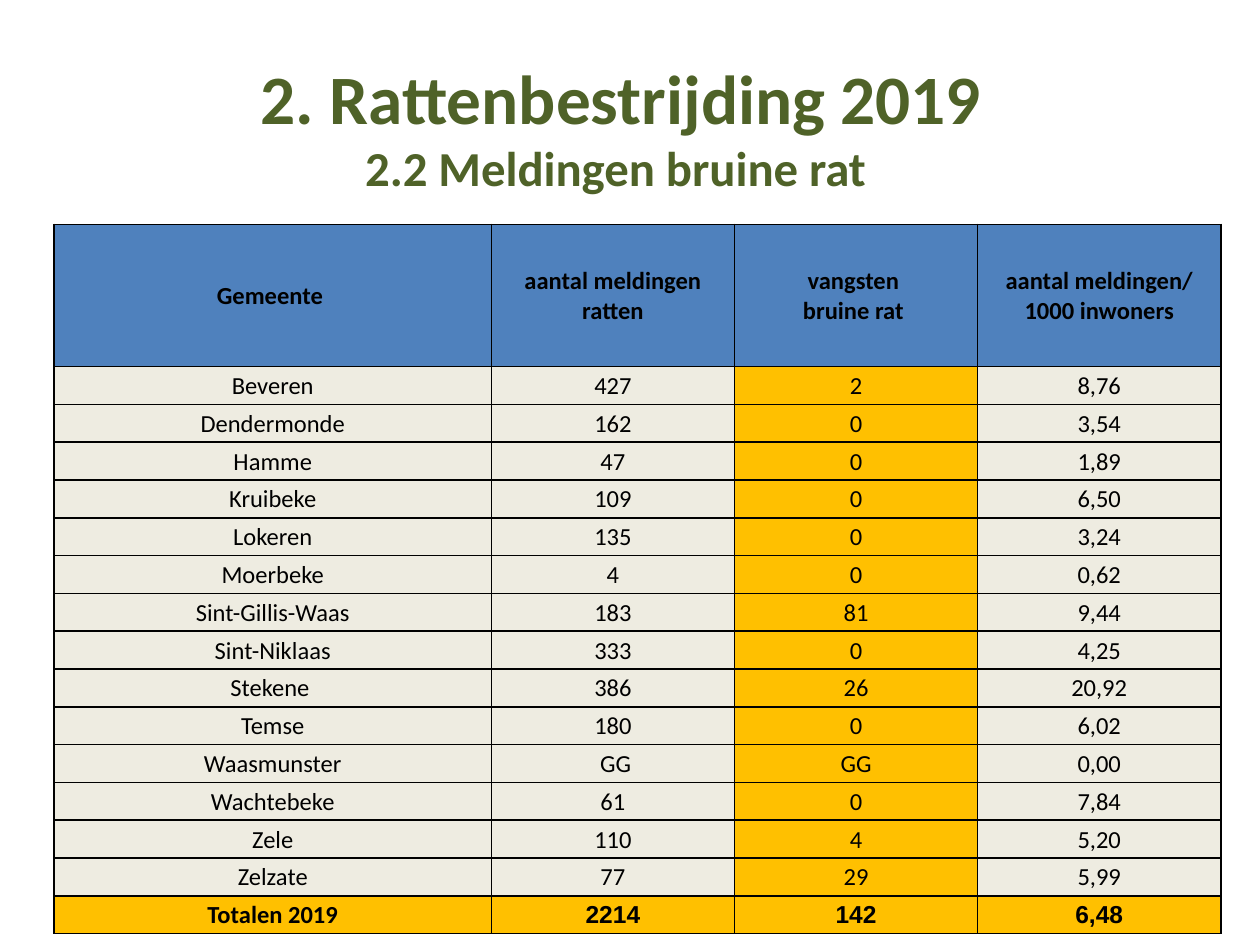
from lxml import etree
from pptx import Presentation, util as u
from pptx.dml.color import RGBColor
from pptx.enum import text
from pptx.oxml.ns import qn

TITLE_LINES = [("2. Rattenbestrijding 2019", 39.6), ("2.2 Meldingen bruine rat ", 27.9)]
HEADER = ("Gemeente ", "aantal meldingen ratten", "vangsten \nbruine rat ",
          "aantal meldingen/ 1000 inwoners")
MUNICIPALITIES = [
    ("Beveren", "427", "2", "8,76"),
    ("Dendermonde", "162", "0", "3,54"),
    ("Hamme", "47", "0", "1,89"),
    ("Kruibeke", "109", "0", "6,50"),
    ("Lokeren", "135", "0", "3,24"),
    ("Moerbeke", "4", "0", "0,62"),
    ("Sint-Gillis-Waas", "183", "81", "9,44"),
    ("Sint-Niklaas", "333", "0", "4,25"),
    ("Stekene ", "386", "26", "20,92"),
    ("Temse", "180", "0", "6,02"),
    ("Waasmunster", " GG", "GG", "0,00"),
    ("Wachtebeke", "61", "0", "7,84"),
    ("Zele", "110", "4", "5,20"),
    ("Zelzate", "77", "29", "5,99"),
]
TOTALS = ("Totalen 2019", "2214", "142", "6,48")
ROWS = [HEADER, *MUNICIPALITIES, TOTALS]

GREEN, BLUE, CREAM, AMBER, BLACK = "4F6228", "4F81BD", "EEECE1", "FFC000", "000000"
LEFT, TABLE_TOP = 0.43, 1.78
COLUMN_WIDTHS = [3.47] + [1.93] * 3
ROW_HEIGHTS = [1.13] + [0.3] * (len(ROWS) - 1)
CATCH_COLUMN = 2
CELL_FORMAT = {"margin_left": u.Inches(0.01), "margin_right": u.Inches(0.01),
               "margin_top": u.Inches(0.01), "margin_bottom": 0,
               "vertical_anchor": text.MSO_ANCHOR.MIDDLE}
TITLE_FORMAT = {"margin_left": 0, "margin_right": 0, "margin_top": 0, "margin_bottom": 0,
                "word_wrap": True, "vertical_anchor": text.MSO_ANCHOR.BOTTOM}


def color(value):
    return RGBColor.from_string(value)


def apply(target, values):
    for name, value in values.items():
        setattr(target, name, value)


def format_paragraph(paragraph, size, ink, bold, font="Calibri"):
    paragraph.alignment = text.PP_ALIGN.CENTER
    apply(paragraph.font, {"size": u.Pt(size), "bold": bold, "name": font})
    paragraph.font.color.rgb = color(ink)


def add_borders(cell):
    properties = cell._tc.get_or_add_tcPr()
    for index, side in enumerate(("lnL", "lnR", "lnT", "lnB")):
        line = etree.Element(qn(f"a:{side}"), w=str(u.Pt(1)))
        fill = etree.SubElement(line, qn("a:solidFill"))
        etree.SubElement(fill, qn("a:srgbClr"), val=BLACK)
        properties.insert(index, line)


def add_title(slide):
    box = slide.shapes.add_textbox(u.Inches(LEFT), 0, u.Inches(9), u.Inches(1.56))
    frame = box.text_frame
    apply(frame, TITLE_FORMAT)
    frame.text = "\n".join(line for line, size in TITLE_LINES)
    for paragraph, (line, size) in zip(frame.paragraphs, TITLE_LINES):
        format_paragraph(paragraph, size, GREEN, True)


def add_report_table(slide):
    table = slide.shapes.add_table(
        len(ROWS), len(HEADER), u.Inches(LEFT), u.Inches(TABLE_TOP),
        u.Inches(sum(COLUMN_WIDTHS)), u.Inches(sum(ROW_HEIGHTS))).table
    apply(table, {"first_row": True, "horz_banding": False})
    for column, width in zip(table.columns, COLUMN_WIDTHS):
        column.width = u.Inches(width)
    for row, height in zip(table.rows, ROW_HEIGHTS):
        row.height = u.Inches(height)
    for r, values in enumerate(ROWS):
        is_header, is_total = r == 0, r == len(ROWS) - 1
        for c, value in enumerate(values):
            cell = table.cell(r, c)
            cell.text = value
            apply(cell, CELL_FORMAT)
            highlighted = is_total or c == CATCH_COLUMN
            cell.fill.solid()
            cell.fill.fore_color.rgb = color(BLUE if is_header else AMBER if highlighted else CREAM)
            add_borders(cell)
            font = "Arial" if is_total and c > 0 else "Calibri"
            for paragraph in cell.text_frame.paragraphs:
                format_paragraph(paragraph, 14, BLACK, is_header or is_total, font)


def main():
    presentation = Presentation()
    apply(presentation, {"slide_width": u.Inches(10), "slide_height": u.Inches(7.5)})
    slide = presentation.slides.add_slide(presentation.slide_layouts[6])
    add_title(slide)
    add_report_table(slide)
    presentation.save("out.pptx")


if __name__ == "__main__":
    main()
